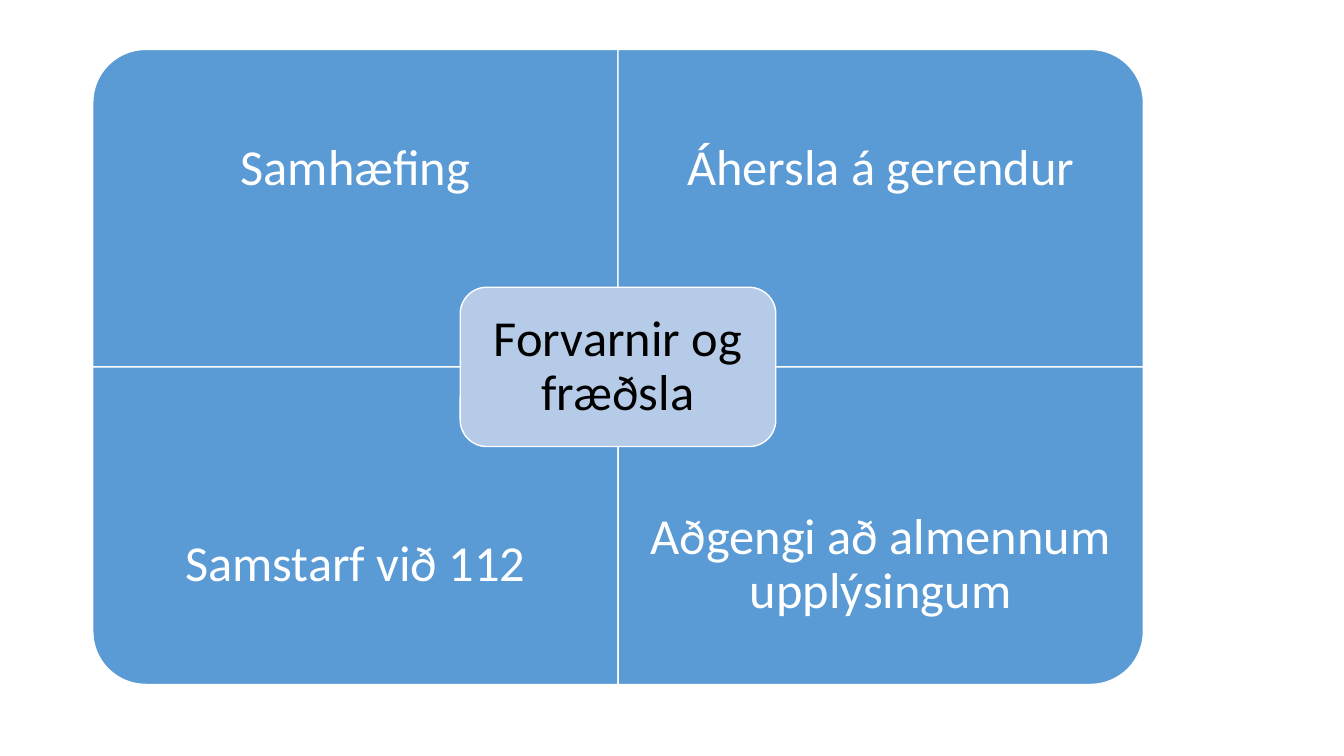
"""Build a four-part matrix slide with a central theme."""
from pptx import Presentation
from pptx.dml.color import RGBColor
from pptx.enum import shapes, text
from pptx.util import Inches, Pt

BLUE = RGBColor(0x5B, 0x9B, 0xD5)
PALE = RGBColor(0xB5, 0xCB, 0xE7)
WHITE = RGBColor(0xFF, 0xFF, 0xFF)
BLACK = RGBColor(0, 0, 0)
KIND = shapes.MSO_SHAPE

deck = Presentation()
deck.slide_width, deck.slide_height = Inches(13.33), Inches(7.5)
slide = deck.slides.add_slide(deck.slide_layouts[6])


def panel(kind, box, fill, turn=0):
    shape = slide.shapes.add_shape(kind, *map(Inches, box))
    shape.shadow.inherit = False
    shape.rotation = turn
    shape.fill.solid()
    shape.fill.fore_color.rgb = fill
    shape.line.color.rgb = WHITE
    shape.line.width = Pt(1)


def label(words, box, inset, color):
    frame = slide.shapes.add_textbox(*map(Inches, box)).text_frame
    frame.word_wrap = True
    frame.vertical_anchor = text.MSO_ANCHOR.MIDDLE
    frame.margin_left = frame.margin_right = Inches(inset)
    frame.margin_top = frame.margin_bottom = Inches(inset)
    para = frame.paragraphs[0]
    para.text = words
    para.alignment = text.PP_ALIGN.CENTER
    para.line_spacing = 0.9
    para.font.name = "Calibri"
    para.font.size = Pt(36)
    para.font.color.rgb = color


left, top = 0.92, 0.49
wide, high = 5.21, 3.15
depth = 2.37
parts = [
    ("Samhæfing", 0, 0, 270),
    ("Áhersla á gerendur", 1, 0, 0),
    ("Samstarf við 112", 0, 1, 180),
    ("Aðgengi að almennum upplýsingum", 1, 1, 90),
]
for words, col, row, turn in parts:
    x, y = left + col * wide, top + row * high
    w, h = (high, wide) if turn in (90, 270) else (wide, high)
    box = (x + (wide - w) / 2, y + (high - h) / 2, w, h)
    panel(KIND.ROUND_1_RECTANGLE, box, BLUE, turn)
    label(words, (x, y + row * (high - depth), wide, depth), 0.28, WHITE)

w, h, pad = 3.13, 1.58, 0.08
x, y = left + wide - w / 2, top + high - h / 2
panel(KIND.ROUNDED_RECTANGLE, (x, y, w, h), PALE)
inner = (x + pad, y + pad, w - 2 * pad, h - 2 * pad)
label("Forvarnir og fræðsla", inner, 0.15, BLACK)

deck.save("out.pptx")
